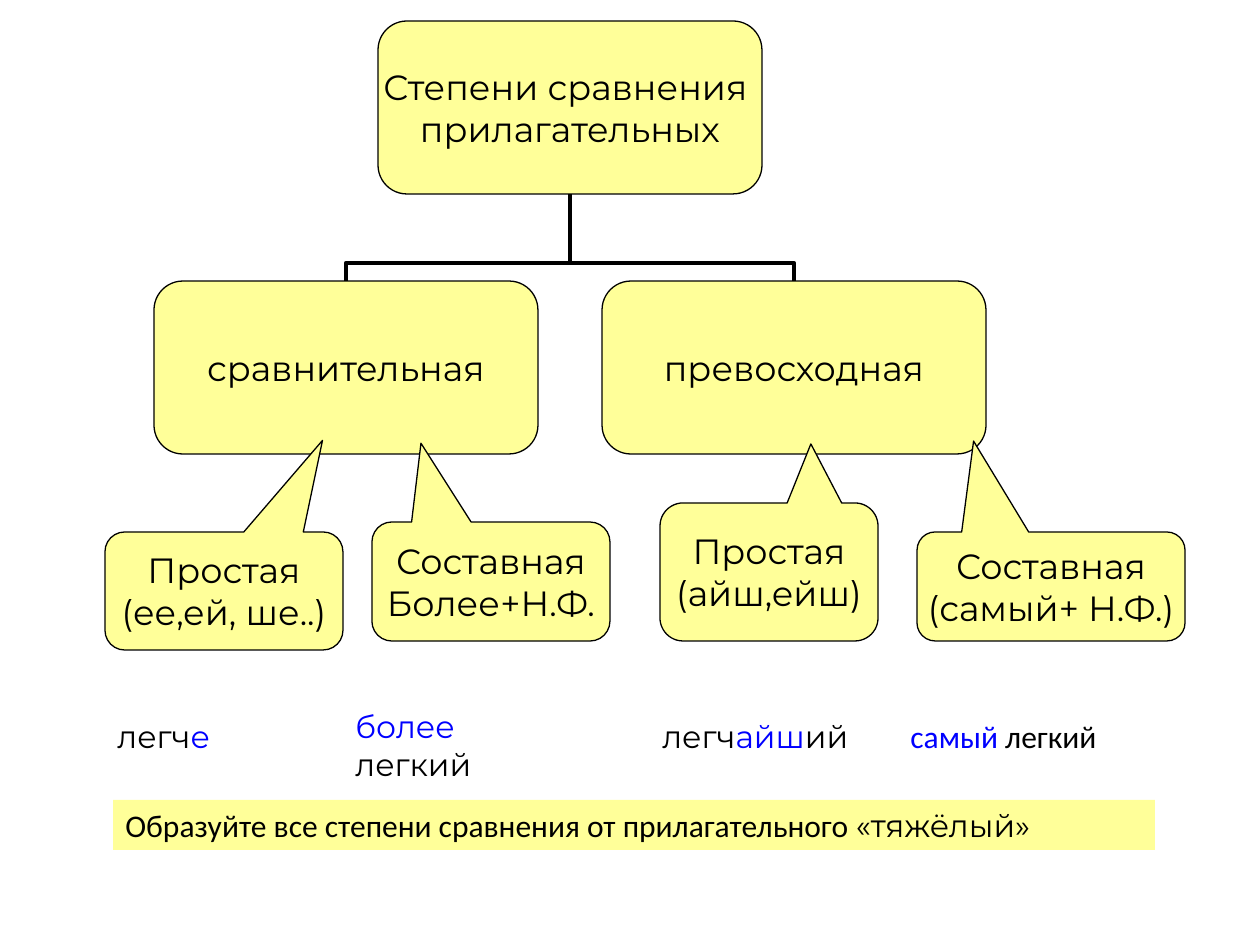
from lxml.etree import SubElement
from pptx import Presentation
from pptx.dml.color import RGBColor
from pptx.enum.shapes import MSO_CONNECTOR, MSO_SHAPE
from pptx.enum.text import MSO_ANCHOR, PP_ALIGN
from pptx.oxml.ns import qn
from pptx.util import Emu, Pt

SCALE = 914400 / 126
YELLOW, BLACK, BLUE = "FFFF99", "000000", "0000FF"
SANS, PLAIN = "Montserrat", "Calibri"


def px(n):
    return Emu(round(n * SCALE))


def color(code):
    return RGBColor.from_string(code)


def write(shape, lines, size=20, font=SANS, align=PP_ALIGN.LEFT,
          anchor=MSO_ANCHOR.TOP, wrap=True, inset=None):
    """Each line is a list of (text, color) or (text, color, font) runs."""
    frame = shape.text_frame
    frame.word_wrap = wrap
    frame.vertical_anchor = anchor
    if inset is not None:
        frame.margin_left = frame.margin_right = px(inset)
        frame.margin_top = frame.margin_bottom = px(inset)
    for i, line in enumerate(lines):
        para = frame.add_paragraph() if i else frame.paragraphs[0]
        para.alignment = align
        for text, tint, *face in line:
            run = para.add_run()
            run.text = text
            run.font.size = Pt(size)
            run.font.name = face[0] if face else font
            run.font.color.rgb = color(tint)


def block(slide, kind, box, adjust=(), edge=True):
    shape = slide.shapes.add_shape(kind, *map(px, box))
    shape.shadow.inherit = False
    shape.fill.solid()
    shape.fill.fore_color.rgb = color(YELLOW)
    if edge:
        shape.line.color.rgb = color(BLACK)
        shape.line.width = Pt(0.75)
    else:
        shape.line.fill.background()
    for i, value in enumerate(adjust):
        shape.adjustments[i] = value
    return shape


def node(slide, kind, box, lines, adjust):
    shape = block(slide, kind, box, adjust)
    write(shape, [[(line, BLACK)] for line in lines], align=PP_ALIGN.CENTER,
          anchor=MSO_ANCHOR.MIDDLE, wrap=False, inset=0)


def elbow(slide, start, end):
    """Vertical elbow up from start to end: a level one, turned a quarter."""
    (x1, y1), (x2, y2) = start, end
    mid_x, mid_y = (x1 + x2) / 2, (y1 + y2) / 2
    half_w, half_h = (y1 - y2) / 2, abs(x2 - x1) / 2
    side = 1 if x1 > x2 else -1
    line = slide.shapes.add_connector(
        MSO_CONNECTOR.ELBOW,
        px(mid_x + side * half_w), px(mid_y - half_h),
        px(mid_x - side * half_w), px(mid_y + half_h))
    line.line.color.rgb = color(BLACK)
    line.line.width = Pt(2.25)
    props = line._element.spPr
    props.find(qn("a:xfrm")).set("rot", str((90 if side > 0 else 270) * 60000))
    geom = props.find(qn("a:prstGeom"))
    guides = geom.find(qn("a:avLst"))
    if guides is None:
        guides = SubElement(geom, qn("a:avLst"))
    SubElement(guides, qn("a:gd"), name="adj1", fmla="val 20900")
    SubElement(props, qn("a:effectLst"))


def tree(slide, box, root, kids):
    """Root on top, two kids at the bottom corners of the box."""
    x, y, w, h = box
    wide, tall = 384, 173
    top = (x + (w - wide) / 2, y)
    spots = [(x, y + h - tall), (x + w - wide, y + h - tall)]
    for left, high in reversed(spots):
        elbow(slide, (left + wide / 2, high), (x + w / 2, y + tall))
    for (left, high), lines in zip([top] + spots, [root] + kids):
        node(slide, MSO_SHAPE.ROUNDED_RECTANGLE, (left, high, wide, tall),
             lines, [0.167])


def forms(slide, box, notes):
    """Callouts that point up to the nodes."""
    x, y = box[:2]
    for left, top, wide, tall, tip, lines in notes:
        node(slide, MSO_SHAPE.ROUNDED_RECTANGULAR_CALLOUT,
             (x + left, y + top, wide, tall), lines, [*tip, 0.167])


def samples(slide, box, words):
    """Row of sample words."""
    x, y = box[:2]
    for left, top, wide, tall, font, runs in words:
        label = slide.shapes.add_textbox(
            *map(px, (x + left, y + top, wide, tall)))
        write(label, [runs], size=18, font=font)


def task(slide, box, runs):
    """Task bar at the foot."""
    shape = block(slide, MSO_SHAPE.RECTANGLE, box, edge=False)
    write(shape, [runs], size=18, font=PLAIN)


def main():
    deck = Presentation()
    deck.slide_width, deck.slide_height = px(1260), px(945)
    slide = deck.slides.add_slide(deck.slide_layouts[6])

    tree(slide, (154, 21, 832, 433),
         ["Степени сравнения ", "прилагательных"],
         [["сравнительная"], ["превосходная"]])

    forms(slide, (105, 503, 1080, 147), [
        (0, 29, 238, 118, (0.414, -1.276), ["Простая", "(ее,ей, ше..)"]),
        (812, 29, 268, 109, (-0.289, -1.334), ["Составная", "(самый+ Н.Ф.)"]),
        (555, 0, 218, 138, (0.192, -0.928), ["Простая", "(айш,ейш)"]),
        (267, 19, 238, 119, (-0.294, -1.162), ["Составная", "Более+Н.Ф."]),
    ])

    samples(slide, (105, 701, 1051, 88), [
        (0, 10, 208, 50, SANS, [("легч", BLACK), ("е", BLUE)]),
        (238, 0, 247, 88, SANS, [("более", BLUE), (" легкий", BLACK)]),
        (545, 10, 238, 50, SANS,
         [("легч", BLACK), ("айш", BLUE), ("ий", BLACK)]),
        (793, 10, 258, 50, PLAIN, [("самый", BLUE), (" легкий", BLACK)]),
    ])

    task(slide, (113, 800, 1042, 50), [
        ("Образуйте все степени сравнения от прилагательного ", BLACK),
        ("«тяжёлый»", BLACK, SANS)])

    deck.save("out.pptx")


if __name__ == "__main__":
    main()
